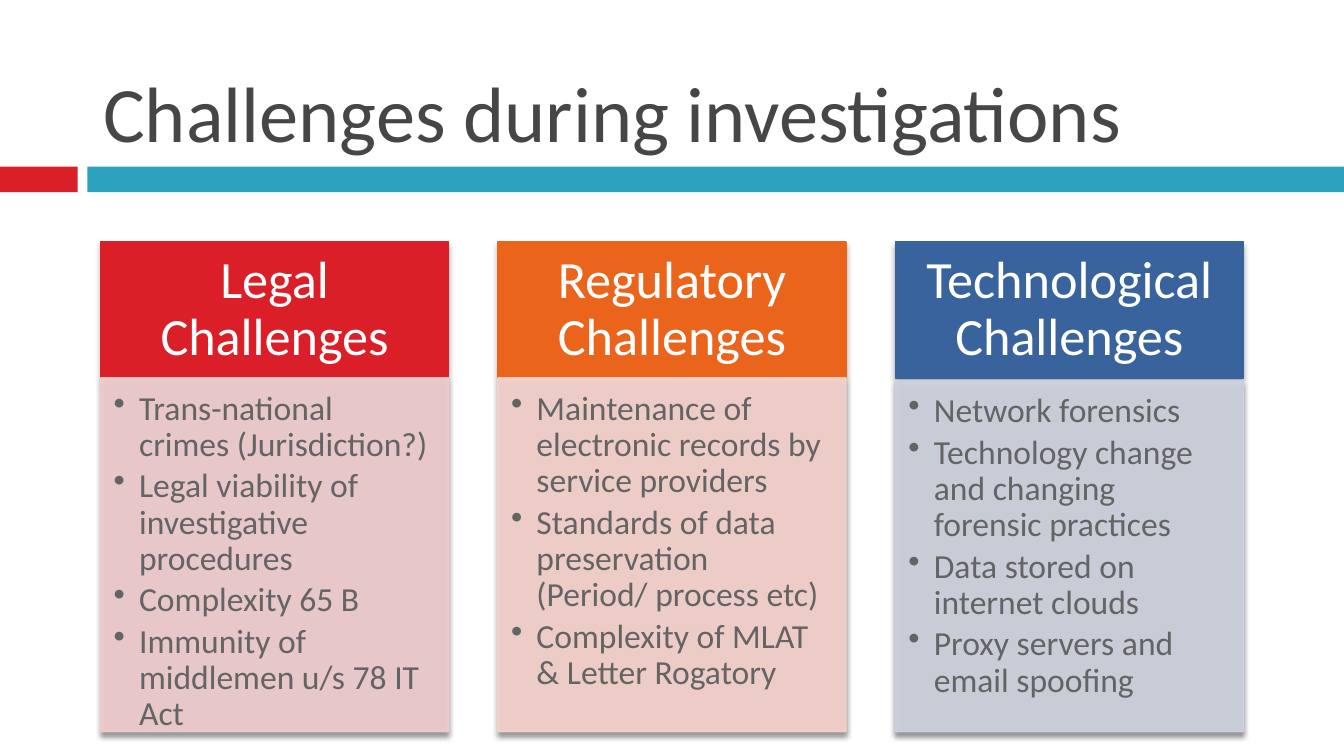
from lxml import etree
from pptx import Presentation
from pptx.dml.color import RGBColor
from pptx.enum.shapes import MSO_SHAPE
from pptx.enum.text import MSO_ANCHOR, PP_ALIGN
from pptx.oxml.ns import qn
from pptx.util import Cm, Pt

RECT = MSO_SHAPE.RECTANGLE
TOP, MIDDLE, BOTTOM = MSO_ANCHOR.TOP, MSO_ANCHOR.MIDDLE, MSO_ANCHOR.BOTTOM
LEFT, CENTER = PP_ALIGN.LEFT, PP_ALIGN.CENTER

FONT = "Calibri"
WHITE = RGBColor(0xFF, 0xFF, 0xFF)
TITLE_GRAY = RGBColor(0x46, 0x46, 0x46)
TEXT_GRAY = RGBColor(0x64, 0x64, 0x64)
RED = RGBColor(0xDA, 0x1F, 0x28)
TEAL = RGBColor(0x2D, 0xA2, 0xBF)
ORANGE = RGBColor(0xEB, 0x64, 0x1B)
BLUE = RGBColor(0x39, 0x63, 0x9D)
PALE_RED = RGBColor(0xF1, 0xCD, 0xCD)
PALE_ORANGE = RGBColor(0xF7, 0xD3, 0xCD)
PALE_BLUE = RGBColor(0xCE, 0xD3, 0xDF)

COLUMN_LEFT, COLUMN_STEP, COLUMN_WIDTH = 1.9, 7.51, 6.58
HEADER_TOP, HEADER_HEIGHT = 4.57, 2.57
PANEL_BOTTOM = 13.82

# Heading, header colour, panel colour, panel top in cm, list items
COLUMNS = [
    ("Legal Challenges", RED, PALE_RED, 7.14, [
        "Trans-national crimes (Jurisdiction?)",
        "Legal viability of investigative procedures",
        "Complexity 65 B",
        "Immunity of middlemen u/s 78 IT Act",
    ]),
    ("Regulatory Challenges", ORANGE, PALE_ORANGE, 7.14, [
        "Maintenance of electronic records by service providers",
        "Standards of data preservation (Period/ process etc)",
        "Complexity of MLAT & Letter Rogatory",
    ]),
    ("Technological Challenges", BLUE, PALE_BLUE, 7.19, [
        "Network forensics",
        "Technology change and changing forensic practices",
        "Data stored on internet clouds",
        "Proxy servers and email spoofing",
    ]),
]


def add_rect(s, left, top, width, height, color):
    """Add a flat, borderless rectangle; lengths are in cm."""
    sp = s.shapes.add_shape(RECT, Cm(left), Cm(top), Cm(width), Cm(height))
    sp.shadow.inherit = False
    sp.fill.solid()
    sp.fill.fore_color.rgb = color
    sp.line.fill.background()
    return sp


def set_line(sp, color):
    sp.line.color.rgb = color
    sp.line.width = Pt(0.79)


def set_alpha(sp, percent):
    """Make both the fill and the line of a shape translucent."""
    for clr in sp._element.spPr.iter(qn("a:srgbClr")):
        etree.SubElement(clr, qn("a:alpha"), val=str(percent * 1000))


def set_shadow(sp, percent, distance):
    """Put a soft black shadow straight below a shape."""
    effects = sp._element.spPr.find(qn("a:effectLst"))
    shadow = etree.SubElement(
        effects, qn("a:outerShdw"), blurRad=str(Pt(3)), dist=str(Pt(distance)),
        dir="5400000", rotWithShape="0")
    clr = etree.SubElement(shadow, qn("a:srgbClr"), val="000000")
    etree.SubElement(clr, qn("a:alpha"), val=str(percent * 1000))


def set_frame(tf, anchor, left, top, right, bottom):
    tf.word_wrap = True
    tf.vertical_anchor = anchor
    tf.margin_left, tf.margin_top = Cm(left), Cm(top)
    tf.margin_right, tf.margin_bottom = Cm(right), Cm(bottom)


def format_paragraph(p, size, color, align, spacing=0.9):
    p.alignment = align
    p.line_spacing = spacing
    p.font.name = FONT
    p.font.size = Pt(size)
    p.font.color.rgb = color


def set_bullet(p):
    pPr = p._p.get_or_add_pPr()
    pPr.set("marL", str(Cm(0.48)))
    pPr.set("indent", str(Cm(-0.48)))
    bullet = etree.Element(qn("a:buChar"), char="•")
    pPr.find(qn("a:defRPr")).addprevious(bullet)


def add_title(s, text):
    sp = s.shapes.title
    sp.left, sp.top, sp.width, sp.height = Cm(1.7), Cm(0.33), Cm(22.66), Cm(2.79)
    tf = sp.text_frame
    tf.text = text
    set_frame(tf, BOTTOM, 0.25, 0.13, 0.25, 0.13)
    format_paragraph(tf.paragraphs[0], 42, TITLE_GRAY, LEFT, 1.0)


def add_header(s, left, text, color):
    sp = add_rect(s, left, HEADER_TOP, COLUMN_WIDTH, HEADER_HEIGHT, color)
    set_line(sp, color)
    set_shadow(sp, 35, 2)
    tf = sp.text_frame
    tf.text = text
    set_frame(tf, MIDDLE, 0.56, 0.3, 0.56, 0.3)
    format_paragraph(tf.paragraphs[0], 28, WHITE, CENTER)


def add_panel(s, left, top, items, color):
    sp = add_rect(s, left, top, COLUMN_WIDTH, PANEL_BOTTOM - top, color)
    set_line(sp, color)
    set_alpha(sp, 90)
    set_shadow(sp, 45, 2.4)
    tf = sp.text_frame
    tf.text = "\n".join(items)
    set_frame(tf, TOP, 0.25, 0.25, 0.36, 0.41)
    for p in tf.paragraphs:
        format_paragraph(p, 18, TEXT_GRAY, LEFT)
        p.space_after = Pt(2.7)
        set_bullet(p)


def main():
    prs = Presentation()
    prs.slide_width, prs.slide_height = Cm(25.4), Cm(14.28)
    s = prs.slides.add_slide(prs.slide_layouts[5])

    add_title(s, "Challenges during investigations")
    add_rect(s, 0, 3.15, 1.47, 0.48, RED)
    add_rect(s, 1.65, 3.15, 23.75, 0.48, TEAL)

    for i, (heading, color, pale, panel_top, items) in enumerate(COLUMNS):
        left = COLUMN_LEFT + i * COLUMN_STEP
        add_header(s, left, heading, color)
        add_panel(s, left, panel_top, items, pale)

    prs.save("out.pptx")


if __name__ == "__main__":
    main()
